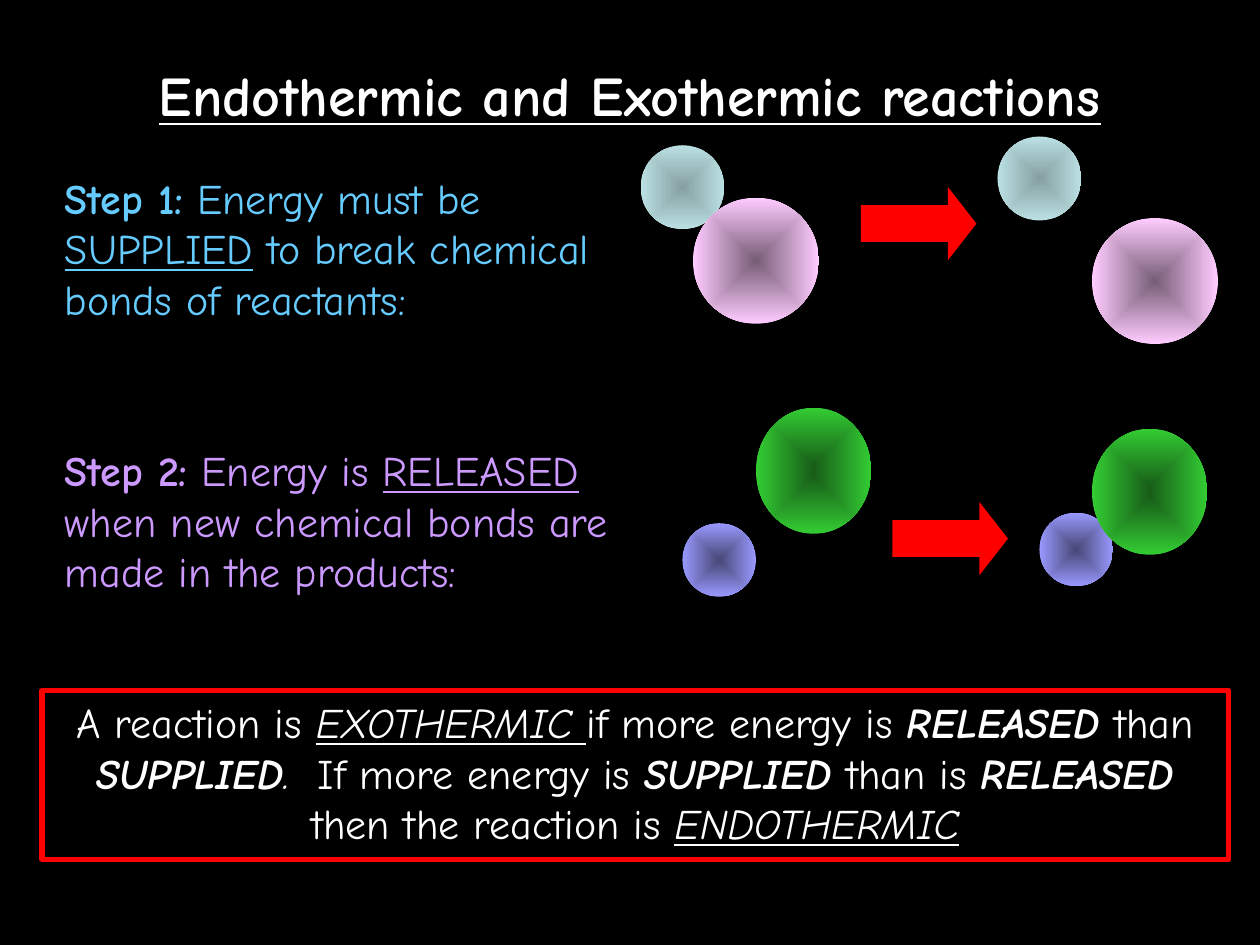
from typing import NamedTuple

from lxml import etree
from pptx import Presentation
from pptx.dml.color import RGBColor
from pptx.enum.shapes import MSO_SHAPE
from pptx.enum.text import MSO_ANCHOR, PP_ALIGN
from pptx.oxml.ns import qn
from pptx.shapes.base import BaseShape
from pptx.slide import Slide
from pptx.text.text import TextFrame
from pptx.util import Pt

OVAL, ARROW, RECT = MSO_SHAPE.OVAL, MSO_SHAPE.RIGHT_ARROW, MSO_SHAPE.RECTANGLE
TOP, MIDDLE = MSO_ANCHOR.TOP, MSO_ANCHOR.MIDDLE
LEFT, CENTER = PP_ALIGN.LEFT, PP_ALIGN.CENTER

FONT = "Comic Neue"
COLORS = {
    "background": "000000",
    "text": "FFFFFF",
    "step 1": "66CCFF",
    "step 2": "CC99FF",
    "accent": "FF0000",
}


class Atom(NamedTuple):
    width: float
    height: float
    core: str
    rim: str


class Placed(NamedTuple):
    atom: Atom
    left: float
    top: float


class Reaction(NamedTuple):
    bonded: list[Placed]
    separate: list[Placed]
    arrow_left: float
    arrow_top: float


class Run(NamedTuple):
    text: str
    style: str = ""  # any of b, i, u


class Step(NamedTuple):
    top: float
    width: float
    height: float
    color: str
    runs: list[Run]


TEAL = Atom(48, 48, "86A0A2", "BBE0E3")
PINK = Atom(72, 72, "765E76", "FFCCFF")
BLUE = Atom(42, 42, "474776", "9999FF")
GREEN = Atom(66, 72, "185E18", "33CC33")

REACTIONS = [
    Reaction([Placed(TEAL, 366, 83), Placed(PINK, 396, 113)],
             [Placed(PINK, 624, 124.6), Placed(TEAL, 570, 78)], 492, 106.8),
    Reaction([Placed(BLUE, 594, 293), Placed(GREEN, 624, 245)],
             [Placed(BLUE, 390, 299), Placed(GREEN, 432, 233)], 510, 286.8),
]

STEPS = [
    Step(95, 330, 124, "step 1", [
        Run("Step 1:", "b"), Run(" Energy must be "), Run("SUPPLIED", "u"),
        Run(" to break chemical bonds of reactants:")]),
    Step(250.6, 360, 94.4, "step 2", [
        Run("Step 2:", "b"), Run(" Energy is "), Run("RELEASED", "u"),
        Run(" when new chemical bonds are made in the products:")]),
]

CONCLUSION = [
    Run("A reaction is "), Run("EXOTHERMIC ", "iu"),
    Run("if more energy is "), Run("RELEASED ", "bi"),
    Run("than "), Run("SUPPLIED", "bi"), Run(".  ", "i"),
    Run("If more energy is "), Run("SUPPLIED ", "bi"),
    Run("than is "), Run("RELEASED ", "bi"),
    Run("then the reaction is "), Run("ENDOTHERMIC", "iu"),
]


def rgb(value: str) -> RGBColor:
    return RGBColor.from_string(value)


def write(frame: TextFrame, runs: list[Run], *, size: float = 24,
          color: str = "text", align: PP_ALIGN = LEFT,
          anchor: MSO_ANCHOR = TOP) -> None:
    frame.word_wrap = True
    frame.vertical_anchor = anchor
    paragraph = frame.paragraphs[0]
    paragraph.alignment = align
    for part in runs:
        run = paragraph.add_run()
        run.text = part.text
        font = run.font
        font.name, font.size = FONT, Pt(size)
        font.color.rgb = rgb(COLORS[color])
        font.bold = "b" in part.style
        font.italic = "i" in part.style
        font.underline = "u" in part.style


def add_text(slide: Slide, left: float, top: float, width: float,
             height: float, runs: list[Run], **text_format) -> None:
    box = slide.shapes.add_textbox(Pt(left), Pt(top), Pt(width), Pt(height))
    write(box.text_frame, runs, **text_format)


def shade_from_centre(shape: BaseShape, core: str, rim: str) -> None:
    """Fill with a gradient that runs from the core colour out to the rim."""
    shape.fill.gradient()
    for stop, color in zip(shape.fill.gradient_stops, (core, rim)):
        stop.color.rgb = rgb(color)
    gradient = shape._element.spPr.find(qn("a:gradFill"))
    gradient.remove(gradient.find(qn("a:lin")))
    outline = etree.SubElement(gradient, qn("a:path"), {"path": "shape"})
    etree.SubElement(outline, qn("a:fillToRect"),
                     {side: "50000" for side in "ltrb"})


def add_atoms(shapes, atoms: list[Placed]) -> None:
    """Draw atoms into a slide's or a group's shape collection."""
    for atom, left, top in atoms:
        ball = shapes.add_shape(OVAL, Pt(left), Pt(top),
                                Pt(atom.width), Pt(atom.height))
        ball.shadow.inherit = False
        ball.line.fill.background()
        shade_from_centre(ball, atom.core, atom.rim)


def add_reaction(slide: Slide, reaction: Reaction) -> None:
    add_atoms(slide.shapes.add_group_shape().shapes, reaction.bonded)
    add_atoms(slide.shapes, reaction.separate)
    arrow = slide.shapes.add_shape(ARROW, Pt(reaction.arrow_left),
                                   Pt(reaction.arrow_top), Pt(66), Pt(42))
    arrow.adjustments[0], arrow.adjustments[1] = 0.5, 0.39
    arrow.shadow.inherit = False
    arrow.fill.solid()
    arrow.fill.fore_color.rgb = rgb(COLORS["accent"])
    arrow.line.fill.background()


def add_conclusion(slide: Slide) -> None:
    frame = slide.shapes.add_shape(RECT, Pt(24), Pt(394.6), Pt(678), Pt(96.5))
    frame.shadow.inherit = False
    frame.fill.background()
    frame.line.color.rgb = rgb(COLORS["accent"])
    frame.line.width = Pt(3)
    write(frame.text_frame, CONCLUSION, align=CENTER)


def main() -> None:
    deck = Presentation()
    deck.slide_width, deck.slide_height = Pt(720), Pt(540)
    slide = deck.slides.add_slide(deck.slide_layouts[6])
    slide.background.fill.solid()
    slide.background.fill.fore_color.rgb = rgb(COLORS["background"])

    add_text(slide, 36, 9, 648, 90,
             [Run("Endothermic and Exothermic reactions", "bu")],
             size=32, align=CENTER, anchor=MIDDLE)
    for step, reaction in zip(STEPS, REACTIONS):
        add_text(slide, 30, step.top, step.width, step.height, step.runs,
                 color=step.color)
        add_reaction(slide, reaction)
    add_conclusion(slide)
    deck.save("out.pptx")


if __name__ == "__main__":
    main()
